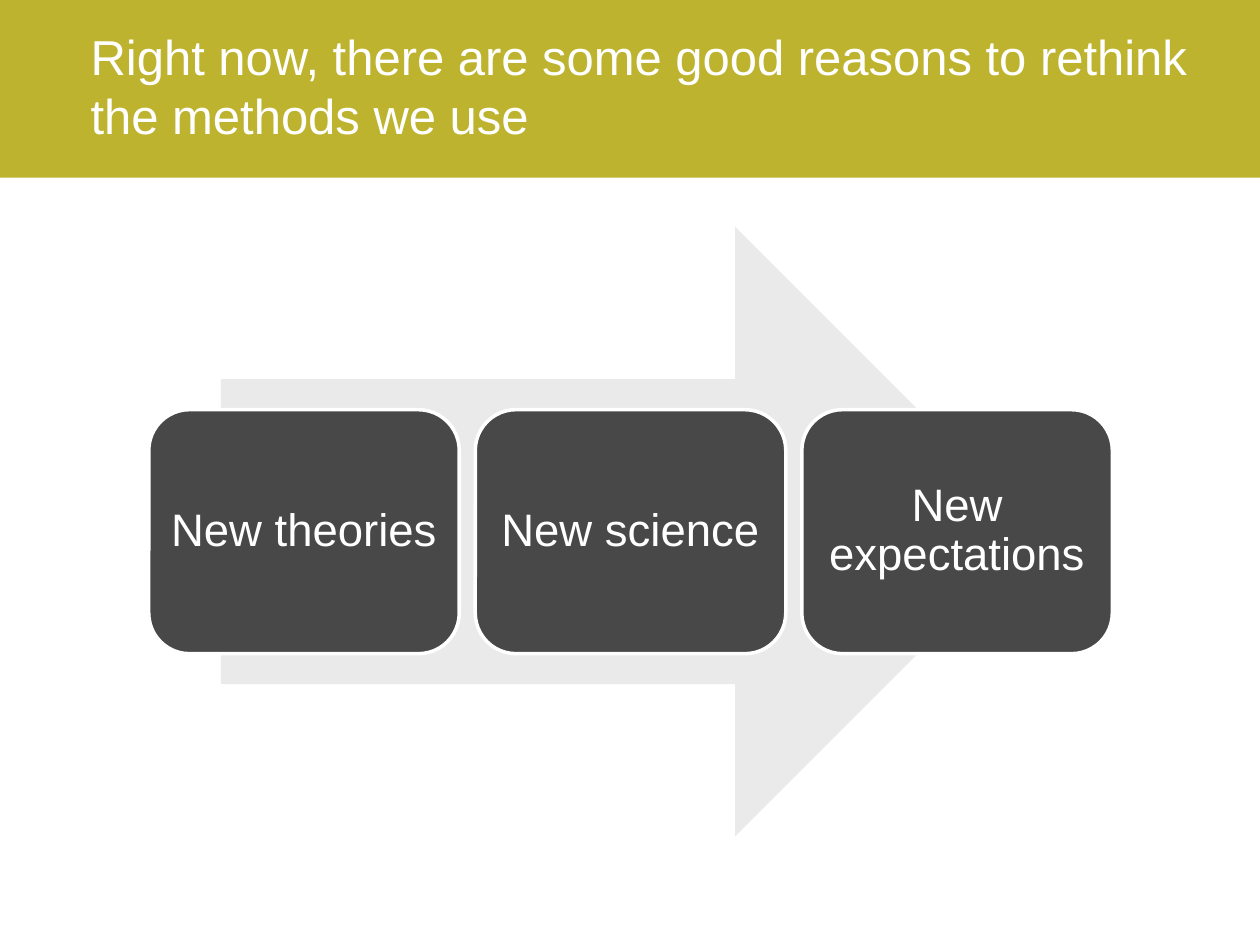
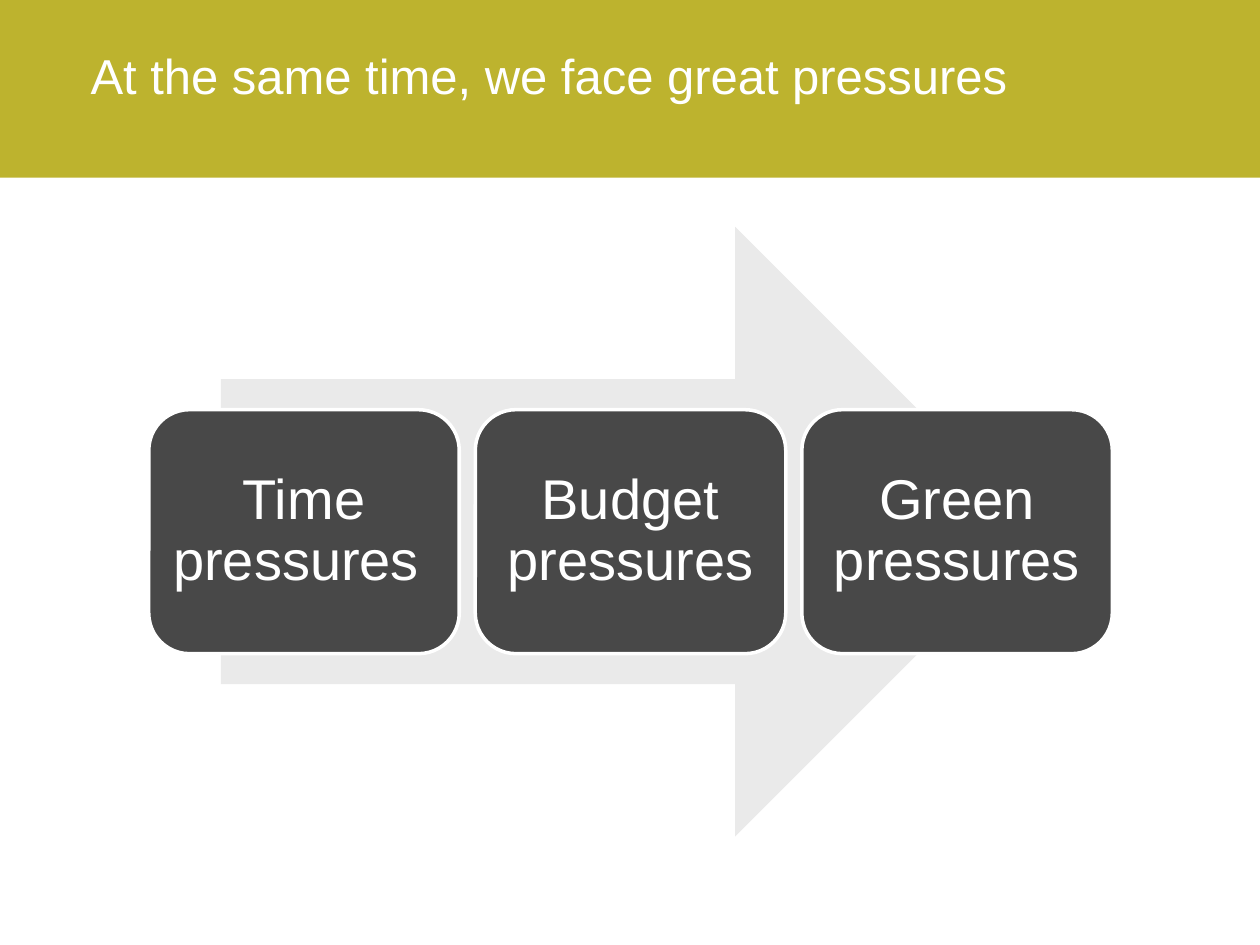
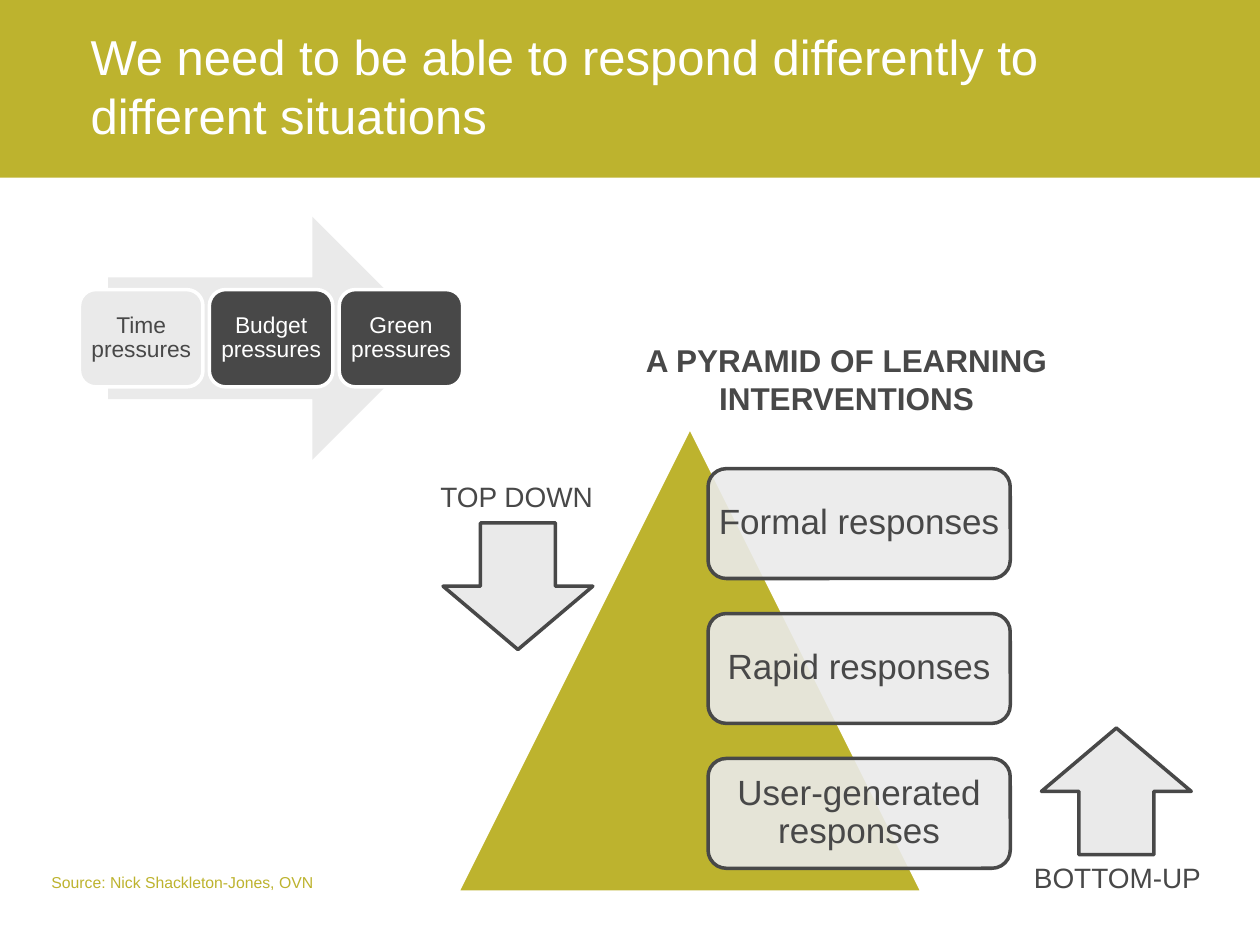
from dataclasses import dataclass
from lxml.etree import SubElement
from pptx import Presentation
from pptx.dml.color import RGBColor
from pptx.enum.shapes import MSO_SHAPE
from pptx.enum.text import MSO_ANCHOR, MSO_AUTO_SIZE, PP_ALIGN
from pptx.oxml.ns import qn
from pptx.util import Pt


@dataclass(frozen=True)
class Theme:
    font: str = "Arial"
    olive: str = "BDB32E"
    dark: str = "484848"
    pale: str = "EAEAEA"
    white: str = "FFFFFF"
    title_size: float = 28
    heading_size: float = 18
    response_size: float = 20
    label_size: float = 16
    source_size: float = 9
    outline: float = 2
    band_height: float = 101.5
    corner_inset: float = 0.0488


THEME = Theme()
PRESSURES = ["Time pressures", "Budget pressures", "Green pressures"]


def write(shape, text, size, color, align=PP_ALIGN.LEFT, bold=False, line_spacing=None):
    frame = shape.text_frame
    frame.text = text
    frame.word_wrap = True
    for para in frame.paragraphs:
        para.alignment = align
        if line_spacing:
            para.line_spacing = line_spacing
        for span in para.runs:
            span.font.name = THEME.font
            span.font.size = Pt(size)
            span.font.bold = bold
            span.font.color.rgb = RGBColor.from_string(color)


def add_figure(page, kind, left, top, width, height, fill, line=None):
    figure = page.shapes.add_shape(kind, Pt(left), Pt(top), Pt(width), Pt(height))
    figure.shadow.inherit = False
    figure.fill.solid()
    figure.fill.fore_color.rgb = RGBColor.from_string(fill)
    if line:
        figure.line.color.rgb = RGBColor.from_string(line)
        figure.line.width = Pt(THEME.outline)
    else:
        figure.line.fill.background()
    return figure


def set_opacity(figure, percent):
    color = figure.element.spPr.find(qn("a:solidFill"))[0]
    SubElement(color, qn("a:alpha")).set("val", str(percent * 1000))


def add_card(page, left, top, width, height, text, size, inset, fill, line, color):
    card = add_figure(page, MSO_SHAPE.ROUNDED_RECTANGLE, left, top, width, height, fill, line)
    write(card, text, size, color, PP_ALIGN.CENTER, line_spacing=0.9)
    frame = card.text_frame
    frame.vertical_anchor = MSO_ANCHOR.MIDDLE
    margin = Pt(max(0, inset - THEME.corner_inset * min(width, height)))
    frame.margin_left = frame.margin_right = margin
    frame.margin_top = frame.margin_bottom = margin
    return card


def add_label(page, left, top, width, height, text, size, color, align=PP_ALIGN.CENTER, bold=False):
    box = page.shapes.add_textbox(Pt(left), Pt(top), Pt(width), Pt(height))
    write(box, text, size, color, align, bold)


def add_page(deck, title, top=11.5, width=630, height=75):
    page = deck.slides.add_slide(deck.slide_layouts[5])
    band = add_figure(page, MSO_SHAPE.RECTANGLE, 0, 0, 720, THEME.band_height, THEME.olive)
    heading = page.shapes.title
    heading.element.addprevious(band.element)
    heading.left, heading.top = Pt(44.6), Pt(top)
    heading.width, heading.height = Pt(width), Pt(height)
    write(heading, title, THEME.title_size, THEME.white)
    heading.text_frame.vertical_anchor = MSO_ANCHOR.TOP
    heading.text_frame.auto_size = MSO_AUTO_SIZE.NONE
    return page


def add_arrow_process(page, left, top, width, height, steps, size, inset, faded=None):
    add_figure(page, MSO_SHAPE.RIGHT_ARROW, left + 0.075 * width, top, 0.85 * width, height, THEME.pale)
    gap = width / 60
    card_width = (width - gap * (len(steps) - 1)) / len(steps)
    for index, step in enumerate(steps):
        fill, color = (THEME.pale, THEME.dark) if index == faded else (THEME.dark, THEME.white)
        add_card(page, left + index * (card_width + gap), top + 0.3 * height, card_width,
                 0.4 * height, step, size, inset, fill, THEME.white, color)


def add_pyramid(page, left, top, side, responses):
    add_figure(page, MSO_SHAPE.ISOSCELES_TRIANGLE, left, top, side, side, THEME.olive, THEME.white)
    for index, response in enumerate(responses):
        card = add_card(page, 404.6, 267.8 + index * 82.8, 0.65 * side, 62.8, response,
                        THEME.response_size, 6, THEME.pale, THEME.dark, THEME.dark)
        set_opacity(card, 90)


def add_direction(page, left, top, rotation):
    arrow = add_figure(page, MSO_SHAPE.DOWN_ARROW, left, top, 85.6, 72.4, THEME.pale, THEME.dark)
    arrow.rotation = rotation


def main():
    deck = Presentation()
    deck.slide_width, deck.slide_height = Pt(720), Pt(540)

    reasons = add_page(deck, "Right now, there are some good reasons to rethink the methods we use", width=652.3)
    add_arrow_process(reasons, 85, 129.6, 550.6, 348.5,
                      ["New theories", "New science", "New expectations"], 26, 7.8)

    pressures = add_page(deck, "At the same time, we face great pressures", top=22.5, height=41)
    add_arrow_process(pressures, 85, 129.6, 550.6, 348.5, ["Time pressures ", *PRESSURES[1:]], 32, 9.6)

    responses = add_page(deck, "We need to be able to respond differently to different situations")
    add_pyramid(responses, 261.4, 244.1, 265.7,
                ["Formal responses", "Rapid responses", "User-generated responses"])
    add_direction(responses, 253.2, 298.8, 0)
    add_direction(responses, 595.1, 416, 180)
    add_label(responses, 236.2, 270.7, 118, 26.6, "TOP DOWN", THEME.label_size, THEME.dark)
    add_label(responses, 573.8, 488.2, 129.6, 26.6, "BOTTOM-UP", THEME.label_size, THEME.dark)
    add_label(responses, 303.8, 191.5, 360, 51, "A PYRAMID OF LEARNING INTERVENTIONS",
              THEME.heading_size, THEME.dark, bold=True)
    add_label(responses, 22.3, 495.4, 208, 18, "Source: Nick Shackleton-Jones, OVN",
              THEME.source_size, THEME.olive, PP_ALIGN.LEFT)
    add_arrow_process(responses, 45.4, 123.8, 219, 139, PRESSURES, 13, 3.6, faded=0)

    deck.save("out.pptx")


if __name__ == "__main__":
    main()
